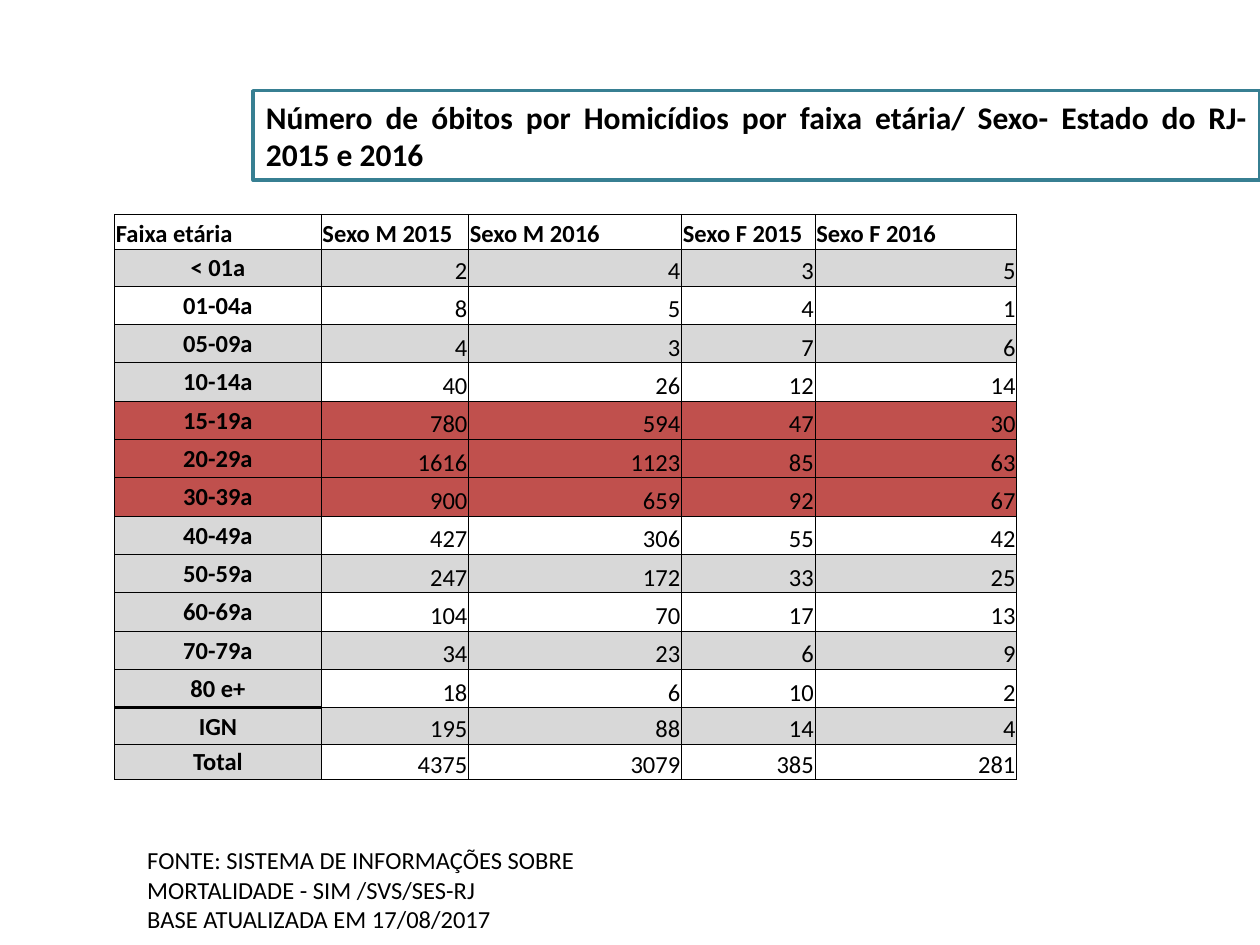
import pptx
import pptx.dml.color
import pptx.enum.text
import pptx.oxml.ns
import pptx.util
from lxml import etree

Inches = pptx.util.Inches
ALIGN = pptx.enum.text.PP_ALIGN
ANCHOR = pptx.enum.text.MSO_ANCHOR
COLORS = {"text": "000000", "title line": "377F92", "gray": "D8D8D8", "red": "C0504D"}

HEADERS = ["Faixa etária", "Sexo M 2015", "Sexo M 2016", "Sexo F 2015", "Sexo F 2016"]
DEATHS = [
    ("< 01a", 2, 4, 3, 5),
    ("01-04a", 8, 5, 4, 1),
    ("05-09a", 4, 3, 7, 6),
    ("10-14a", 40, 26, 12, 14),
    ("15-19a", 780, 594, 47, 30),
    ("20-29a", 1616, 1123, 85, 63),
    ("30-39a", 900, 659, 92, 67),
    ("40-49a", 427, 306, 55, 42),
    ("50-59a", 247, 172, 33, 25),
    ("60-69a", 104, 70, 17, 13),
    ("70-79a", 34, 23, 6, 9),
    ("80 e+", 18, 6, 10, 2),
    ("IGN", 195, 88, 14, 4),
    ("Total", 4375, 3079, 385, 281),
]
HIGHLIGHTED = {"15-19a", "20-29a", "30-39a"}
COLUMN_WIDTHS = [1.64, 1.17, 1.69, 1.06, 1.6]
TABLE_HEIGHT = 4.49
EDGE_HEIGHTS = [0.28, 0.29]
MIDDLE_COUNT = len(DEATHS) + 1 - 2 * len(EDGE_HEIGHTS)
MIDDLE_HEIGHT = (TABLE_HEIGHT - 2 * sum(EDGE_HEIGHTS)) / MIDDLE_COUNT
ROW_HEIGHTS = EDGE_HEIGHTS + [MIDDLE_HEIGHT] * MIDDLE_COUNT + EDGE_HEIGHTS[::-1]


def rgb(name):
    return pptx.dml.color.RGBColor.from_string(COLORS[name])


def write_text(frame, text, size=14, bold=False, align=ALIGN.LEFT, font="Calibri"):
    for index, line in enumerate(text.split("\n")):
        para = frame.add_paragraph() if index else frame.paragraphs[0]
        para.alignment = align
        span = para.add_run()
        span.text = line
        span.font.name = font
        span.font.size = pptx.util.Pt(size)
        span.font.bold = bold
        span.font.color.rgb = rgb("text")


def draw_borders(cell, widths):
    properties = cell._tc.get_or_add_tcPr()
    for side in "LRTB":
        width = pptx.util.Pt(widths.get(side, 0.5))
        line = etree.SubElement(properties, pptx.oxml.ns.qn(f"a:ln{side}"), w=str(width))
        fill = etree.SubElement(line, pptx.oxml.ns.qn("a:solidFill"))
        etree.SubElement(fill, pptx.oxml.ns.qn("a:srgbClr"), val=COLORS["text"])


def cell_color(row, column, label):
    if label in HIGHLIGHTED:
        return "red"
    if row % 2 or (column == 0 and row > 2):
        return "gray"
    return None


def border_widths(row, column, label):
    if column == 0:
        return {"80 e+": {"B": 2}, "IGN": {"T": 2}}.get(label, {})
    return {0: {"B": 1}, 1: {"T": 1}}.get(row, {})


class SlideBuilder:
    def __init__(self, deck):
        self.page = deck.slides.add_slide(deck.slide_layouts[5])

    def title(self, text, left, top, width, height):
        box = self.page.shapes.title
        box.left, box.top = Inches(left), Inches(top)
        box.width, box.height = Inches(width), Inches(height)
        box.line.color.rgb = rgb("title line")
        box.line.width = pptx.util.Pt(2)
        frame = box.text_frame
        frame.word_wrap = True
        frame.auto_size = pptx.enum.text.MSO_AUTO_SIZE.NONE
        frame.vertical_anchor = ANCHOR.MIDDLE
        write_text(frame, text, size=18, bold=True, align=ALIGN.JUSTIFY)

    def text(self, text, left, top, width, height):
        box = self.page.shapes.add_textbox(Inches(left), Inches(top), Inches(width), Inches(height))
        box.text_frame.word_wrap = True
        write_text(box.text_frame, text)

    def table(self, rows, left, top):
        table = self.page.shapes.add_table(
            len(rows), len(COLUMN_WIDTHS), Inches(left), Inches(top),
            Inches(sum(COLUMN_WIDTHS)), Inches(TABLE_HEIGHT)).table
        table.first_row = table.horz_banding = False
        for column, width in zip(table.columns, COLUMN_WIDTHS):
            column.width = Inches(width)
        for row, height in zip(table.rows, ROW_HEIGHTS):
            row.height = Inches(height)
        for row, values in enumerate(rows):
            for column, value in enumerate(values):
                self.cell(table.cell(row, column), row, column, values[0], value)

    def cell(self, cell, row, column, label, value):
        is_header, is_label = row == 0, column == 0
        cell.margin_left = cell.margin_right = cell.margin_top = Inches(0.01)
        cell.margin_bottom = 0
        cell.vertical_anchor = ANCHOR.MIDDLE if is_label and not is_header else ANCHOR.BOTTOM
        align = ALIGN.LEFT if is_header else ALIGN.CENTER if is_label else ALIGN.RIGHT
        write_text(cell.text_frame, str(value), bold=is_header or is_label, align=align)
        draw_borders(cell, border_widths(row, column, label))
        color = cell_color(row, column, label)
        if color:
            cell.fill.solid()
            cell.fill.fore_color.rgb = rgb(color)
        else:
            cell.fill.background()


def main():
    deck = pptx.Presentation()
    deck.slide_width, deck.slide_height = Inches(10), Inches(7.5)
    builder = SlideBuilder(deck)
    builder.text(
        "FONTE: SISTEMA DE INFORMAÇÕES SOBRE MORTALIDADE - SIM /SVS/SES-RJ\n"
        "BASE ATUALIZADA EM 17/08/2017", 1.07, 6.66, 3.93, 0.84)
    builder.title(
        "Número de óbitos por Homicídios por faixa etária/ Sexo- Estado do RJ- 2015 e 2016",
        2.01, 0.72, 7.99, 0.71)
    builder.table([HEADERS] + DEATHS, 0.91, 1.7)
    deck.save("out.pptx")


if __name__ == "__main__":
    main()
